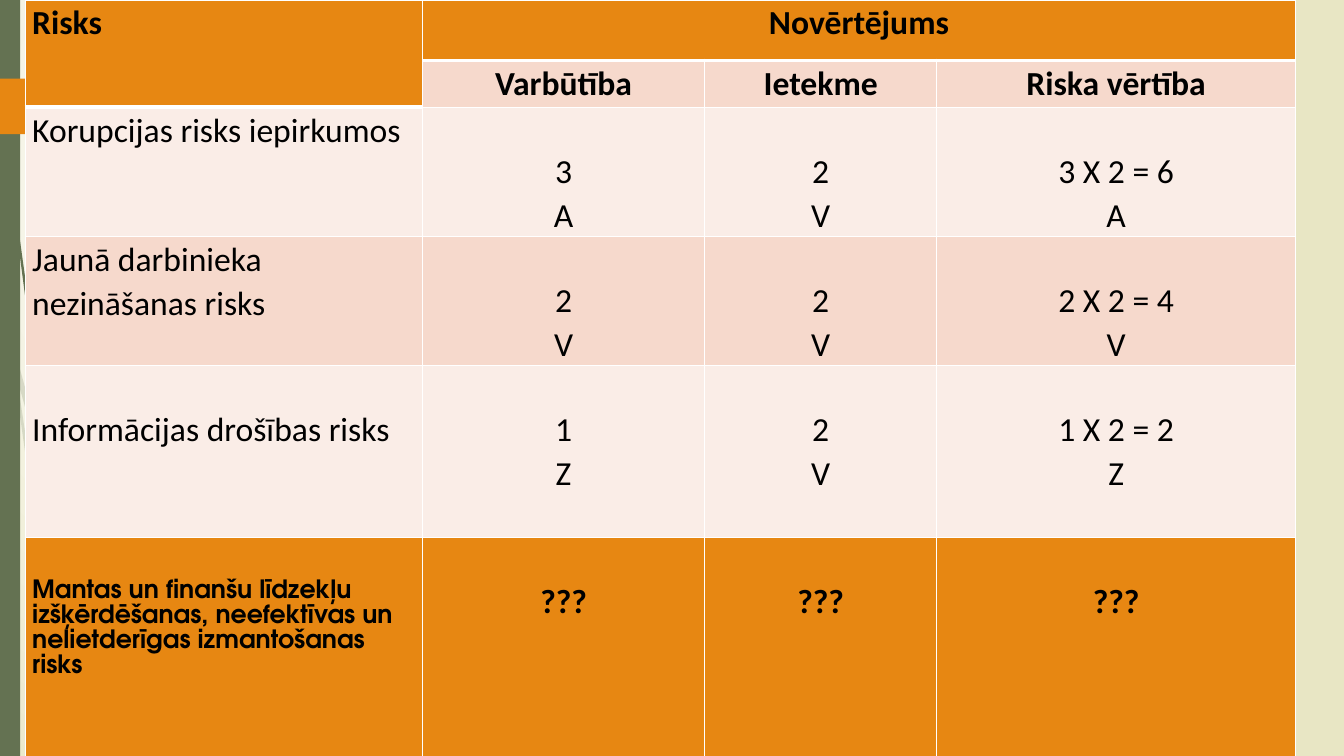
"""Build a risk assessment slide with a rating table."""
import pptx
import pptx.util
import pptx.dml.color
import pptx.enum.shapes
import pptx.enum.text
import pptx.oxml.ns
import pptx.oxml.xmlchemy

Inches = pptx.util.Inches
RGBColor = pptx.dml.color.RGBColor
ORANGE = RGBColor(0xE7, 0x87, 0x12)
GREEN = RGBColor(0x64, 0x72, 0x52)
PINK = RGBColor(0xF6, 0xD9, 0xCC)
PALE = RGBColor(0xFA, 0xED, 0xE7)
SAND = RGBColor(0xE8, 0xE6, 0xC4)
WHITE = RGBColor(0xFF, 0xFF, 0xFF)
BLACK = RGBColor(0, 0, 0)

WIDTH, HEIGHT = 13.33, 7.5
TABLE_LEFT = 0.25
COLUMNS = [3.94, 2.8, 2.3, 3.56]
RATING_ROWS = [0.6, 0.465, 1.16, 1.16, 1.74]
OPEN_ROW = 2.24
LINE_GAP = 0.41
GRASS_UNIT = 0.01
FAINT_GRASS = [
    [(11, 350), (9, 322), (0, 282), (0, 299), (10, 344)],
    [(58, 522), (84, 599), (85, 586), (62, 520), (14, 345), (17, 376)],
    [(92, 607), (88, 596), (88, 610), (123, 694), (150, 751), (155, 751), (127, 692)],
    [(119, 751), (124, 751), (105, 711)],
    [(93, 683), (70, 619), (31, 469), (17, 376), (11, 350), (28, 470), (65, 621), (92, 693), (101, 714), (99, 707)],
    [(84, 599), (87, 646), (93, 683), (96, 692), (105, 711), (103, 706), (91, 646), (88, 610), (88, 608)],
    [(88, 584), (110, 462), (160, 349), (229, 245), (268, 198), (290, 175), (312, 154), (312, 153),
     (289, 175), (268, 197), (228, 244), (158, 348), (107, 461), (85, 584), (85, 586), (88, 596)],
    [(101, 714), (114, 751), (119, 751)],
    [(88, 608), (88, 610), (88, 596), (85, 586), (84, 599)],
    [(96, 692), (93, 683), (99, 707), (101, 714), (119, 751), (105, 711)],
]
GRASS = [
    [(7, 110), (17, 233), (33, 355), (56, 477), (57, 481), (55, 457), (55, 453), (36, 355), (19, 232),
     (8, 109), (5, 48), (4, 0), (3, 0), (4, 48)],
    [(88, 592), (106, 645), (106, 633), (106, 631), (93, 590), (60, 472), (64, 505)],
    [(113, 649), (110, 641), (111, 656), (132, 708), (152, 749), (157, 749), (136, 706)],
    [(110, 691), (98, 657), (72, 556), (64, 505), (57, 477), (68, 557), (93, 659), (111, 708), (117, 722), (116, 717)],
    [(60, 472), (58, 453), (54, 349), (58, 245), (63, 193), (70, 141), (62, 193), (56, 245), (52, 349), (55, 449)],
    [(133, 749), (136, 749), (122, 719)],
    [(57, 477), (64, 505), (60, 472), (55, 449), (55, 453)],
    [(111, 633), (125, 552), (158, 476), (205, 406), (231, 374), (245, 359), (261, 344), (260, 344),
     (245, 358), (231, 373), (204, 405), (156, 474), (122, 551), (106, 631), (110, 641)],
    [(117, 722), (127, 749), (131, 749)],
    [(106, 645), (110, 691), (116, 706), (122, 719), (121, 716), (111, 656), (109, 651)],
    [(106, 645), (109, 651), (111, 656), (110, 641), (106, 631), (106, 633)],
    [(116, 706), (110, 691), (116, 717), (117, 722), (130, 749), (133, 749), (122, 719)],
]

HEADINGS = ["Varbūtība", "Ietekme", "Riska vērtība"]
RISKS = [
    ("Korupcijas risks iepirkumos", ["3\nA", "2\nV", "3 X 2 = 6\nA"], PALE, 0),
    ("Jaunā darbinieka nezināšanas risks", ["2\nV", "2\nV", "2 X 2 = 4\nV"], PINK, 0),
    ("Informācijas drošības risks", ["1\nZ", "2\nV", "1 X 2 = 2\nZ"], PALE, LINE_GAP),
]
OPEN_RISK = "Mantas un finanšu līdzekļu izšķērdēšanas, neefektīvas un nelietderīgas izmantošanas risks"


def add_xml(parent, tag, **attributes):
    """Append a drawing element to a parent and return it."""
    child = pptx.oxml.xmlchemy.OxmlElement(tag)
    for key, setting in attributes.items():
        child.set(key, str(setting))
    parent.append(child)
    return child


def paint_background(slide):
    """Fill the background with a radial white to sand gradient."""
    fill = slide.background.fill
    fill.gradient()
    for stop, color in zip(fill.gradient_stops, (WHITE, SAND)):
        stop.color.rgb = color
    gradient = slide.element.find(".//" + pptx.oxml.ns.qn("a:gradFill"))
    gradient.remove(gradient.find(pptx.oxml.ns.qn("a:lin")))
    circle = add_xml(gradient, "a:path", path="circle")
    add_xml(circle, "a:fillToRect", l=50000, t=50000, r=100000, b=100000)


def paint(shape, color, opacity=100):
    """Give a decoration a flat fill without line or shadow."""
    shape.shadow.inherit = False
    shape.fill.solid()
    shape.fill.fore_color.rgb = color
    shape.line.fill.background()
    if opacity < 100:
        tint = shape.element.spPr.find(".//" + pptx.oxml.ns.qn("a:srgbClr"))
        add_xml(tint, "a:alpha", val=opacity * 1000)


def add_grass(slide, blades, opacity):
    """Draw a group of grass blades."""
    tuft = slide.shapes.add_group_shape()
    for root, *edge in blades:
        outline = tuft.shapes.build_freeform(*root, scale=Inches(GRASS_UNIT))
        outline.add_line_segments(edge, close=True)
        paint(outline.convert_to_shape(), GREEN, opacity)


def add_decor(slide):
    """Add the grass, the side bar and the arrow tab."""
    kinds = pptx.enum.shapes.MSO_SHAPE
    add_grass(slide, FAINT_GRASS, 20)
    add_grass(slide, GRASS, 100)
    bar = slide.shapes.add_shape(kinds.RECTANGLE, 0, 0, Inches(0.2), Inches(HEIGHT))
    paint(bar, GREEN)
    tab = slide.shapes.add_shape(kinds.PENTAGON, 0, Inches(0.78), Inches(1.74), Inches(0.55))
    paint(tab, ORANGE)


def border_cell(cell, bottom=1):
    """Draw white borders on a cell, with a chosen bottom width in points."""
    properties = cell._tc.get_or_add_tcPr()
    for place, (side, points) in enumerate(zip("LRTB", (1, 1, 1, bottom))):
        line = add_xml(properties, "a:ln" + side, w=int(pptx.util.Pt(points)))
        add_xml(add_xml(line, "a:solidFill"), "a:srgbClr", val=WHITE)
        properties.insert(place, line)


def fill_cell(cell, text, color, bold=False, centered=True, top=0, size=24, font="Calibri"):
    """Write and format the text of one cell."""
    cell.margin_left = cell.margin_right = Inches(0.07)
    cell.margin_top, cell.margin_bottom = Inches(top), 0
    cell.fill.solid()
    cell.fill.fore_color.rgb = color
    cell.text_frame.text = text
    align = pptx.enum.text.PP_ALIGN
    for paragraph in cell.text_frame.paragraphs:
        paragraph.alignment = align.CENTER if centered else align.LEFT
        paragraph.line_spacing = 1.07
        for run in paragraph.runs:
            run.font.name, run.font.size = font, pptx.util.Pt(size)
            run.font.bold = bold
            run.font.color.rgb = BLACK


def add_grid(slide, top, rows):
    """Add a plain table on the shared columns."""
    grid = slide.shapes.add_table(len(rows), len(COLUMNS), Inches(TABLE_LEFT), Inches(top),
                                  Inches(sum(COLUMNS)), Inches(sum(rows))).table
    grid.first_row = grid.horz_banding = False
    for column, width in zip(grid.columns, COLUMNS):
        column.width = Inches(width)
    for row, height in zip(grid.rows, rows):
        row.height = Inches(height)
    return grid


def add_ratings(slide):
    """Add the table of rated risks under its two-level header."""
    ratings = add_grid(slide, 0, RATING_ROWS)
    ratings.cell(0, 0).merge(ratings.cell(1, 0))
    ratings.cell(0, 1).merge(ratings.cell(0, 3))
    fill_cell(ratings.cell(0, 0), "Risks", ORANGE, bold=True, centered=False)
    fill_cell(ratings.cell(0, 1), "Novērtējums", ORANGE, bold=True)
    for column, heading in enumerate(HEADINGS, 1):
        fill_cell(ratings.cell(1, column), heading, PINK, bold=True)
    for row, (risk, scores, color, top) in enumerate(RISKS, 2):
        fill_cell(ratings.cell(row, 0), risk, color, centered=False, top=top)
        for column, score in enumerate(scores, 1):
            fill_cell(ratings.cell(row, column), score, color, top=LINE_GAP)
    for row in range(len(RATING_ROWS)):
        for column in range(len(COLUMNS)):
            under_header = row == 0 or (row, column) == (1, 0)
            border_cell(ratings.cell(row, column), 3 if under_header else 1)


def add_open_risk(slide):
    """Add the highlighted row of the risk still to be rated."""
    question = add_grid(slide, 5.33, [OPEN_ROW])
    fill_cell(question.cell(0, 0), OPEN_RISK, ORANGE, True, False, LINE_GAP, 18, "TeX Gyre Adventor")
    for column in range(len(COLUMNS)):
        if column:
            fill_cell(question.cell(0, column), "???", ORANGE, bold=True, top=LINE_GAP)
        border_cell(question.cell(0, column), 3)


def main():
    """Build and save the slide."""
    deck = pptx.Presentation()
    deck.slide_width, deck.slide_height = Inches(WIDTH), Inches(HEIGHT)
    slide = deck.slides.add_slide(deck.slide_layouts[6])
    for build in (paint_background, add_decor, add_ratings, add_open_risk):
        build(slide)
    deck.save("out.pptx")


if __name__ == "__main__":
    main()
